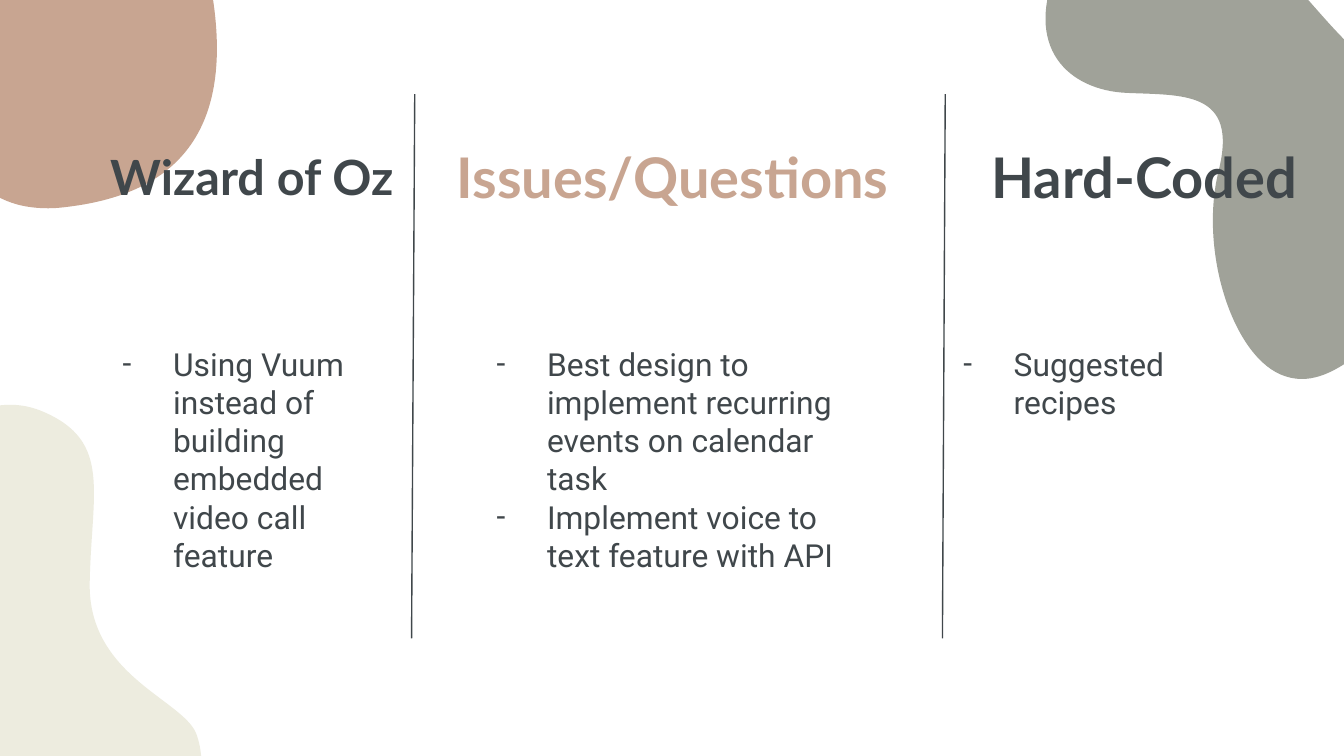
import math

import pptx
import pptx.dml.color
import pptx.enum.shapes
import pptx.enum.text
import pptx.oxml.ns
import pptx.util
from lxml import etree

Pt = pptx.util.Pt
qn = pptx.oxml.ns.qn
ALIGN = pptx.enum.text.PP_ALIGN
ANCHOR = pptx.enum.text.MSO_ANCHOR

DARK, CLAY, SAGE, CREAM = "40474B", "C8A591", "A0A299", "EDECDF"

BLOBS = [
    {"color": CREAM, "turn": 41.1, "center": (-4.7, 316.4), "points": [
        (105.1, 392.4), (97.2, 374.4), (47.5, 361.4), (48.2, 312.5),
        (49, 263.5), (60.5, 236.2), (23, 220.3),
        (-14.4, 204.5), (-42.5, 246.2), (-70.6, 239),
        (-98.6, 232.6), (-180.7, 262.1), (-121, 333.4),
        (-61.2, 403.9), (23, 450.7), (65.5, 446.4),
        (108.7, 441.4), (112.3, 411.1), (105.1, 392.4)]},
    {"color": SAGE, "turn": 252.8, "center": (707, 62.6), "points": [
        (603.4, 49.7), (633.6, 51.1), (663.8, 48.2), (653, 91.4),
        (642.2, 134.6), (661, 193), (689, 201.6),
        (717.8, 211), (742.3, 169.9), (771.1, 159.8),
        (799.9, 149.8), (844.6, 183.6), (856.1, 142.6),
        (867.6, 101.5), (831.6, 18.7), (789.8, 40.3),
        (748.1, 61.2), (722.2, 23), (693.4, -8.6),
        (664.6, -40.3), (588.2, -64.1), (567.4, -19.4),
        (547.2, 25.9), (573.1, 48.2), (603.4, 49.7)]},
    {"color": CLAY, "turn": 0, "center": (44.3, 26.6), "points": [
        (52.6, -58.3), (47.5, -58.3), (41.8, -57.6), (36, -57.6),
        (-13, -51.8), (-36, -13.7), (-36, 31.7),
        (-28.8, 83.5), (-13, 111.6), (25.9, 111.6),
        (31, 111.6), (36, 110.9), (41, 110.2),
        (89.3, 103), (124.6, 75.6), (114.5, 2.2),
        (108.7, -40.3), (90, -58.3), (52.6, -58.3)]},
]

COLUMNS = [
    {"title": "Wizard of Oz", "size": 26, "color": DARK,
     "title_span": (49.7, 170.6), "body_span": (49.7, 170.6),
     "items": ["Using Vuum instead of building embedded video call feature"]},
    {"title": "Issues/Questions", "size": 30, "color": CLAY,
     "title_span": (215.3, 290.2), "body_span": (250, 220.3),
     "items": ["Best design to implement recurring events on calendar task",
               "Implement voice to text feature with API"]},
    {"title": "Hard-Coded", "size": 30, "color": DARK,
     "title_span": (510.5, 205.2), "body_span": (500, 170.6),
     "items": ["Suggested recipes"]},
]
TITLE_ROW, BODY_ROW = (78, 32.4), (177.6, 118.1)
DIVIDERS = [(222.2, 220.5), (506.4, 504.9)]
DIVIDER_TOP, DIVIDER_BOTTOM = 50.4, 342


def rgb(value):
    return pptx.dml.color.RGBColor.from_string(value)


def apply(target, values):
    for name, value in values.items():
        setattr(target, name, value)


def unturn(point, center, degrees):
    cos, sin = math.cos(math.radians(degrees)), math.sin(math.radians(degrees))
    x, y = point[0] - center[0], point[1] - center[1]
    return Pt(center[0] + x * cos + y * sin), Pt(center[1] - x * sin + y * cos)


def add_blob(page, color, turn, center, points):
    start, *rest = [unturn(point, center, turn) for point in points]
    builder = page.shapes.build_freeform(*start)
    builder.add_line_segments(rest, close=True)
    blob = builder.convert_to_shape()
    segments = list(blob._element.iter(qn("a:lnTo")))
    for first in range(0, len(rest), 3):
        curve = etree.Element(qn("a:cubicBezTo"))
        segments[first].addprevious(curve)
        for segment in segments[first:first + 3]:
            curve.append(segment[0])
            segment.getparent().remove(segment)
    blob.rotation = turn
    blob.shadow.inherit = False
    blob.fill.solid()
    blob.fill.fore_color.rgb = rgb(color)
    blob.line.fill.background()


def add_bullet(para, mark, font, color):
    properties = para._p.get_or_add_pPr()
    properties.set("marL", str(Pt(36)))
    properties.set("indent", str(-Pt(27)))
    shade = etree.SubElement(properties, qn("a:buClr"))
    etree.SubElement(shade, qn("a:srgbClr")).set("val", color)
    etree.SubElement(properties, qn("a:buFont")).set("typeface", font)
    etree.SubElement(properties, qn("a:buChar")).set("char", mark)


def add_text(page, place, row, lines, font, color, anchor, align, bullet=None):
    box = page.shapes.add_textbox(Pt(place[0]), Pt(row[0]), Pt(place[1]), Pt(row[1]))
    frame = box.text_frame
    apply(frame, {"word_wrap": True, "vertical_anchor": anchor,
                  **{f"margin_{side}": Pt(7.2) for side in ("left", "top", "right", "bottom")}})
    frame.text = "\n".join(lines)
    for para in frame.paragraphs:
        para.alignment = align
        span = para.runs[0]
        apply(span.font, font)
        span.font.color.rgb = rgb(color)
        if bullet:
            add_bullet(para, bullet, font["name"], color)


def add_divider(page, top_x, bottom_x):
    line = page.shapes.add_connector(
        pptx.enum.shapes.MSO_CONNECTOR.STRAIGHT,
        Pt(top_x), Pt(DIVIDER_TOP), Pt(bottom_x), Pt(DIVIDER_BOTTOM))
    line.line.color.rgb = rgb(DARK)
    line.line.width = Pt(0.75)
    etree.SubElement(line._element.spPr, qn("a:effectLst"))


def main():
    deck = pptx.Presentation()
    apply(deck, {"slide_width": Pt(720), "slide_height": Pt(405)})
    page = deck.slides.add_slide(deck.slide_layouts[6])
    for blob in BLOBS:
        add_blob(page, **blob)
    for column in COLUMNS:
        add_text(page, column["body_span"], BODY_ROW, column["items"],
                 {"name": "Roboto", "size": Pt(17)}, DARK, ANCHOR.TOP, ALIGN.LEFT, "-")
        add_text(page, column["title_span"], TITLE_ROW, [column["title"]],
                 {"name": "Lato", "size": Pt(column["size"]), "bold": True},
                 column["color"], ANCHOR.MIDDLE, ALIGN.CENTER)
    for divider in DIVIDERS:
        add_divider(page, *divider)
    deck.save("out.pptx")


if __name__ == "__main__":
    main()
